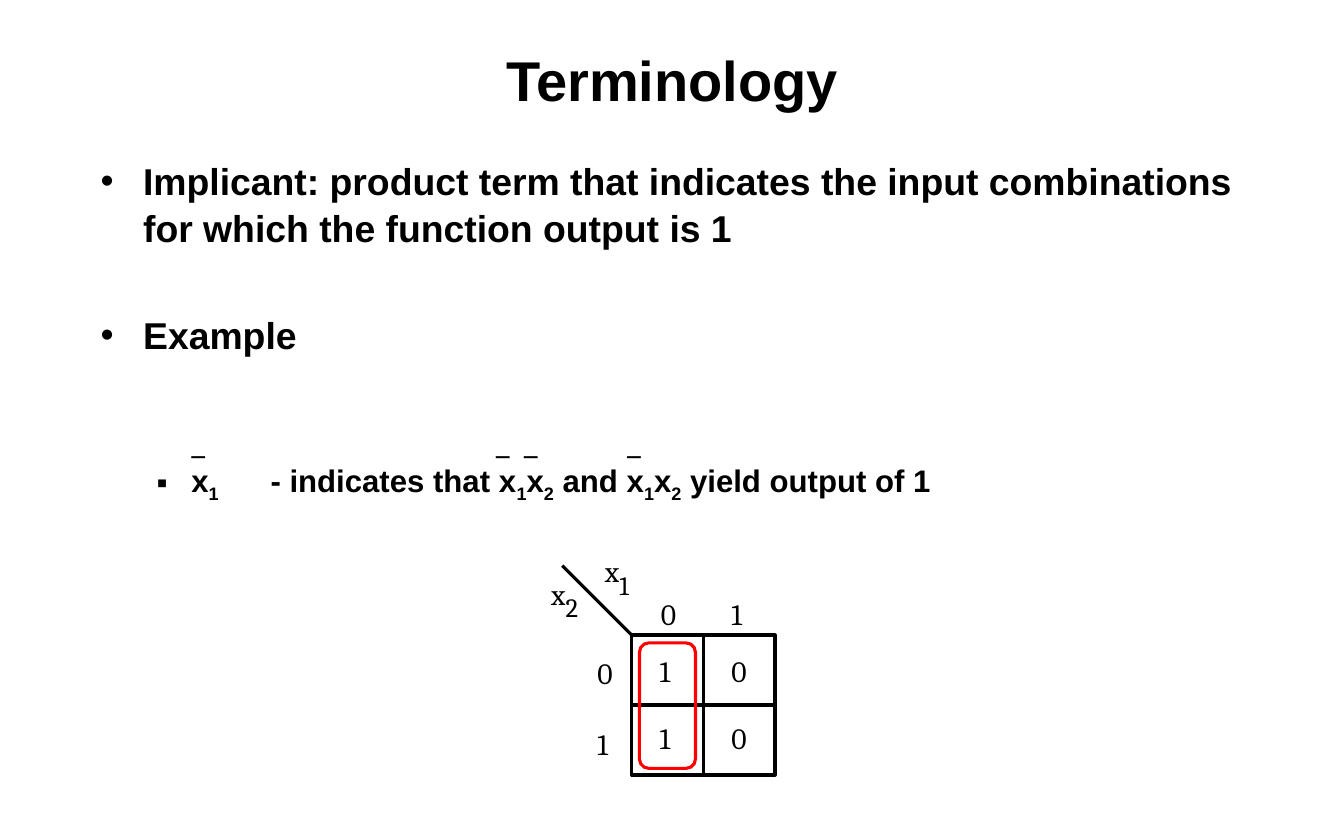
import pptx
import pptx.util
import pptx.dml.color
import pptx.enum.shapes
import pptx.enum.text
import lxml.etree as etree

Pt, Inches = pptx.util.Pt, pptx.util.Inches
SHAPE = pptx.enum.shapes.MSO_SHAPE
ANCHOR = pptx.enum.text.MSO_ANCHOR
ALIGN = pptx.enum.text.PP_ALIGN
BLACK = pptx.dml.color.RGBColor(0, 0, 0)
WHITE = pptx.dml.color.RGBColor(255, 255, 255)
RED = pptx.dml.color.RGBColor(255, 0, 0)
DRAW = "{http://schemas.openxmlformats.org/drawingml/2006/main}"
COLS, ROWS = 48, 30


class Deck:
    """Holds the style and the current slide; lengths are grid columns and rows."""
    sans, serif, line = "Arial", "Cambria", Pt(2)

    def __init__(self):
        self.prs = pptx.Presentation()
        self.prs.slide_width, self.prs.slide_height = Inches(12), Inches(7.5)
        self.slide = self.prs.slides.add_slide(self.prs.slide_layouts[5])

    def grid(self, col, row):
        return (round(self.prs.slide_width * col / COLS),
                round(self.prs.slide_height * row / ROWS))

    def font(self, run, size, name, bold=False):
        run.font.size, run.font.name, run.font.bold = Pt(size), name, bold
        run.font.color.rgb = BLACK

    def title(self, text, row, high):
        head = self.slide.shapes.title
        head.left, head.top = self.grid(0, row)
        head.width, head.height = self.grid(COLS, high)
        frame = head.text_frame
        frame.text = text
        frame.vertical_anchor = ANCHOR.MIDDLE
        frame.paragraphs[0].alignment = ALIGN.CENTER
        self.font(frame.paragraphs[0].runs[0], 36, self.sans, True)

    def body(self, col, row, wide, high):
        box = self.slide.shapes.add_textbox(*self.grid(col, row), *self.grid(wide, high))
        box.text_frame.word_wrap = True
        return box.text_frame

    def bullet(self, para, parts, size, mark, left, hang, before):
        """Add runs; a part starting with '_' is a subscript, a lone space is a wide gap."""
        para.line_spacing, para.space_before = 1.05, Pt(before)
        props = para._p.get_or_add_pPr()
        props.set("marL", str(Inches(left)))
        props.set("indent", str(-Inches(hang)))
        etree.SubElement(props, DRAW + "buFont", typeface=self.sans)
        etree.SubElement(props, DRAW + "buChar", char=mark)
        for part in parts:
            run = para.add_run()
            run.text = part.lstrip("_")
            self.font(run, size, self.sans, True)
            if part.startswith("_"):
                run._r.get_or_add_rPr().set("baseline", "-25000")
            elif part == " ":
                run._r.get_or_add_rPr().set("spc", "2780")

    def label(self, text, col, row, size=19):
        box = self.slide.shapes.add_textbox(*self.grid(col, row), *self.grid(0.8, 1.28))
        frame = box.text_frame
        frame.margin_left = frame.margin_right = frame.margin_top = frame.margin_bottom = 0
        frame.word_wrap = False
        frame.text = text
        self.font(frame.paragraphs[0].runs[0], size, self.serif)

    def term(self, name, sub, col, row):
        self.label(name, col, row)
        self.label(sub, col + 0.52, row + 0.56, 17)

    def bar(self, col, row):
        """Put the overbar of a negated variable."""
        frame = self.body(col, row, 1, 2)
        frame.text = "_"
        self.font(frame.paragraphs[0].runs[0], 24, self.serif)

    def shape(self, kind, col, row, wide, high, color, fill=None):
        item = self.slide.shapes.add_shape(kind, *self.grid(col, row), *self.grid(wide, high))
        item.shadow.inherit = False
        if fill is None:
            item.fill.background()
        else:
            item.fill.solid()
            item.fill.fore_color.rgb = fill
        item.line.color.rgb, item.line.width = color, self.line
        return item

    def rule(self, start, end):
        item = self.slide.shapes.add_connector(
            pptx.enum.shapes.MSO_CONNECTOR.STRAIGHT, *self.grid(*start), *self.grid(*end))
        item.line.color.rgb, item.line.width = BLACK, self.line
        etree.SubElement(item._element.spPr, DRAW + "effectLst")
        return item

    def split(self, frame, first, last):
        """Join the middles of two sides of a frame."""
        item = self.rule((0, 0), (1, 1))
        item.begin_connect(frame, first)
        item.end_connect(frame, last)


def main():
    deck = Deck()
    deck.title("Terminology", 1.32, 3)

    frame = deck.body(3.2, 5.36, 41.6, 21.68)
    sub = ["x", "_1", " ", "- indicates that x", "_1", "x", "_2", " and x", "_1",
           "x", "_2", " yield output of 1"]
    points = [
        (["Implicant: product term that indicates the input combinations "
          "for which the function output is 1"], 24, "•", 0.38, 0.38, 0),
        (["Example"], 24, "•", 0.38, 0.38, 38.6),
        (sub, 20, "▪", 0.81, 0.31, 66),
    ]
    for i, point in enumerate(points):
        para = frame.add_paragraph() if i else frame.paragraphs[0]
        deck.bullet(para, *point)

    # Karnaugh map
    left, top = 22.56, 22.68
    table = deck.shape(SHAPE.RECTANGLE, left, top, 5.12, 5, BLACK, WHITE)
    deck.split(table, 1, 3)
    deck.split(table, 0, 2)
    deck.rule((left - 2.48, top - 2.48), (left, top))
    deck.term("x", "2", 19.68, 20.56)
    deck.term("x", "1", 21.6, 19.76)

    cells = ["10", "10"]
    for i, values in enumerate(cells):
        deck.label(str(i), left + 1.04 + 2.52 * i, 21.28)
        deck.label(str(i), 21.34, top + 0.72 + 2.52 * i)
        for j, value in enumerate(values):
            deck.label(value, left + 1 + 2.56 * j, top + 0.64 + 2.4 * i)
    deck.shape(SHAPE.ROUNDED_RECTANGLE, left + 0.28, top + 0.28, 2, 4.48, RED)

    for col in (6.44, 17.32, 18.32, 22):
        deck.bar(col, 14.7)

    deck.prs.save("out.pptx")


if __name__ == "__main__":
    main()
